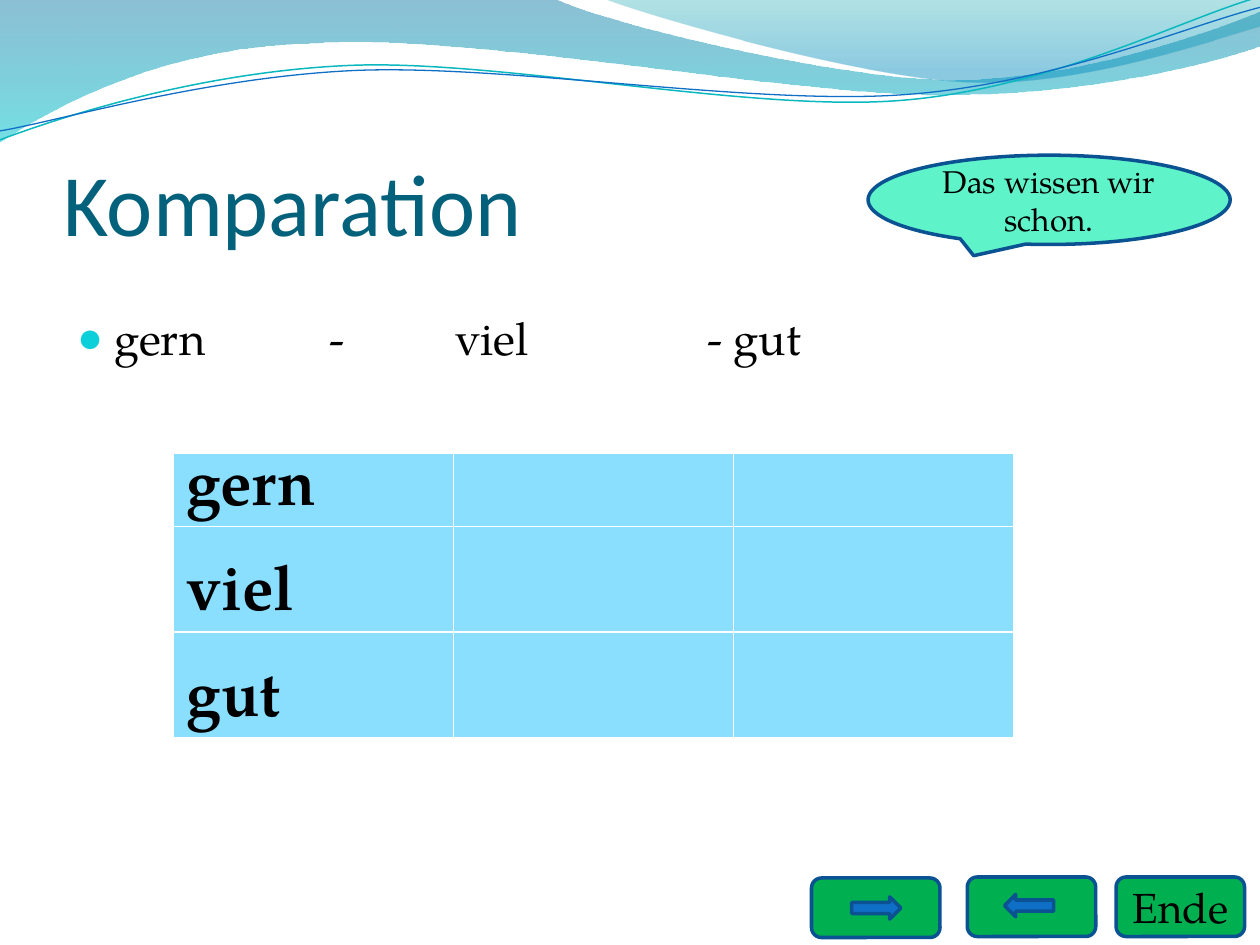
"""Build a German grammar slide on comparison with a table and navigation buttons."""
from dataclasses import dataclass

from lxml import etree
from pptx import Presentation
from pptx.dml.color import RGBColor
from pptx.enum.shapes import MSO_SHAPE
from pptx.enum.text import MSO_ANCHOR, PP_ALIGN
from pptx.oxml.ns import qn
from pptx.util import Cm, Pt

ROUND_RECT = MSO_SHAPE.ROUNDED_RECTANGLE
ARROW = MSO_SHAPE.RIGHT_ARROW
CALLOUT = MSO_SHAPE.OVAL_CALLOUT
MIDDLE, BOTTOM = MSO_ANCHOR.MIDDLE, MSO_ANCHOR.BOTTOM
LEFT, CENTER = PP_ALIGN.LEFT, PP_ALIGN.CENTER
SERIF, SANS = "TeX Gyre Pagella", "Calibri"
COLORS = {
    "text": "000000", "title": "04617B", "bullet": "0BD0D9", "cell": "8ADFFF",
    "button": "00B050", "outline": "0B5292", "arrow": "0F6FC6",
    "callout": "5FF3CA", "teal_line": "0AB8BF", "blue_line": "0F6FC6",
    "deep": "0074A1", "aqua": "00C6CF", "sea": "00A1A9", "sky": "008BBF",
}


@dataclass
class Stop:
    """Gradient stop with position and opacity from 0 to 1."""
    position: float
    color: str
    opacity: float


@dataclass
class Wave:
    """Path in cm: one point per line segment, three per Bézier segment."""
    start: tuple
    segments: list
    stops: tuple = ()
    line: str = ""
    width: float = 0


@dataclass
class Box:
    """Outlined preset shape, measured in cm."""
    kind: int
    left: float
    top: float
    width: float
    height: float
    fill: str
    text: str = ""
    size: int = 18
    rotation: int = 0


WAVES = [
    Wave((0, 0), [
        [(11.18, -0.03)],
        [(12.09, 0.43), (16.87, 1.6), (19.25, 1.6)],
        [(21.67, 1.6), (24.33, 0.66), (25.4, 0.23)],
        [(25.43, 0.91)],
        [(24.97, 1.12), (22.1, 1.93), (18.95, 1.91)],
        [(15.8, 1.91), (9.7, 0.71), (6.53, 0.86)],
        [(3.28, 0.91), (1.17, 2.11), (-0.03, 2.87)],
        [(0, 0)],
    ], stops=(Stop(0, "deep", 0.45), Stop(1, "aqua", 0.55))),
    Wave((12.17, -0.03), [
        [(12.93, 0.28), (17.32, 1.57), (19.53, 1.65)],
        [(21.74, 1.75), (24.41, 0.81), (25.4, 0.53)],
        [(25.4, 0)],
        [(12.17, -0.03)],
    ], stops=(Stop(0, "sea", 0.3), Stop(0.8, "sky", 0.45))),
    Wave((0, 2.82), [
        [(1.22, 2.36), (4.01, 1.45), (7.04, 1.32)],
        [(10.03, 1.19), (15.06, 2.26), (18.11, 2.03)],
        [(21.16, 1.8), (23.83, 0.38), (25.35, -0.05)],
    ], line="teal_line", width=0.85),
    Wave((0, 2.64), [
        [(1.19, 2.44), (4.17, 1.55), (7.19, 1.42)],
        [(10.24, 1.3), (15.16, 2.13), (18.21, 1.91)],
        [(21.23, 1.7), (23.9, 0.53), (25.4, 0.15)],
    ], line="blue_line", width=0.75),
]
NAVIGATION = [
    Box(ROUND_RECT, 16.36, 17.7, 2.59, 1.2, "button"),
    Box(ROUND_RECT, 19.5, 17.68, 2.59, 1.2, "button"),
    Box(ROUND_RECT, 22.5, 17.68, 2.59, 1.2, "button", "Ende", 24),
    Box(ARROW, 17.17, 18.08, 0.99, 0.45, "arrow"),
    Box(ARROW, 20.25, 18.03, 0.99, 0.45, "arrow", rotation=180),
]
SPEECH = Box(CALLOUT, 17.5, 3.13, 7.3, 1.8, "callout", "Das wissen wir schon.")
WORDS = ["gern", "viel", "gut"]
ROW_HEIGHTS = [1.48, 2.13, 2.13]
TAB_STOPS = [5.08, 7.62, 10.16, 12.7]


def rgb(name: str) -> RGBColor:
    return RGBColor.from_string(COLORS[name])


def add_run(p, text: str, size: float, font: str = SERIF, color: str = "text",
            bold: bool = False) -> None:
    r = p.add_run()
    r.text = text
    r.font.size, r.font.name, r.font.bold = Pt(size), font, bold
    r.font.color.rgb = rgb(color)


def bend(sp, segments: list) -> None:
    """Merge each three line points of a Bézier segment into one curve."""
    lines = iter(list(sp._element.iter(qn("a:lnTo"))))
    for segment in segments:
        steps = [next(lines) for _ in segment]
        if len(steps) == 3:
            curve = etree.Element(qn("a:cubicBezTo"))
            steps[0].addprevious(curve)
            for step in steps:
                curve.append(step[0])
                step.getparent().remove(step)


def draw_wave(s, wave: Wave) -> None:
    points = [wave.start] + [pt for segment in wave.segments for pt in segment]
    vertices = [(Cm(x), Cm(y)) for x, y in points]
    builder = s.shapes.build_freeform(*vertices[0])
    builder.add_line_segments(vertices[1:], close=bool(wave.stops))
    sp = builder.convert_to_shape()
    bend(sp, wave.segments)
    sp.shadow.inherit = False
    if not wave.stops:
        sp.fill.background()
        sp.line.color.rgb, sp.line.width = rgb(wave.line), Pt(wave.width)
        return
    sp.line.fill.background()
    sp.fill.gradient()
    sp.fill.gradient_angle = 270
    for target, stop in zip(sp.fill.gradient_stops, wave.stops):
        target.position, target.color.rgb = stop.position, rgb(stop.color)
    for clr, stop in zip(sp._element.spPr.iter(qn("a:srgbClr")), wave.stops):
        etree.SubElement(clr, qn("a:alpha"), val=str(round(stop.opacity * 100000)))


def draw_box(s, box: Box) -> None:
    sp = s.shapes.add_shape(box.kind, Cm(box.left), Cm(box.top),
                            Cm(box.width), Cm(box.height))
    sp.shadow.inherit = False
    sp.rotation = box.rotation
    sp.fill.solid()
    sp.fill.fore_color.rgb = rgb(box.fill)
    sp.line.color.rgb, sp.line.width = rgb("outline"), Pt(2)
    if box.text:
        tf = sp.text_frame
        tf.word_wrap, tf.vertical_anchor = True, MIDDLE
        p = tf.paragraphs[0]
        p.alignment = CENTER
        add_run(p, box.text, box.size)


def place(s, sp, left: float, top: float, width: float, height: float) -> None:
    """Position a placeholder in cm and bring it to the front."""
    sp.left, sp.top, sp.width, sp.height = Cm(left), Cm(top), Cm(width), Cm(height)
    s.shapes._spTree.append(sp._element)


def fill_title(s) -> None:
    sp = s.shapes.title
    place(s, sp, 1.27, 1.95, 22.86, 3.18)
    tf = sp.text_frame
    tf.vertical_anchor = BOTTOM
    tf.margin_left = tf.margin_right = tf.margin_bottom = 0
    p = tf.paragraphs[0]
    p.alignment = LEFT
    add_run(p, "Komparation", 50, SANS, "title")


def fill_body(s) -> None:
    sp = s.placeholders[1]
    place(s, sp, 1.3, 6.12, 22.86, 12.19)
    p = sp.text_frame.paragraphs[0]
    p.space_before = Pt(5)
    pPr = p._p.get_or_add_pPr()
    pPr.set("marL", str(Cm(0.76)))
    pPr.set("indent", str(Cm(-0.76)))
    clr = etree.SubElement(pPr, qn("a:buClr"))
    etree.SubElement(clr, qn("a:srgbClr"), val=COLORS["bullet"])
    etree.SubElement(pPr, qn("a:buSzPct"), val="95000")
    etree.SubElement(pPr, qn("a:buChar"), char="●")
    tabs = etree.SubElement(pPr, qn("a:tabLst"))
    for stop in TAB_STOPS:
        etree.SubElement(tabs, qn("a:tab"), pos=str(Cm(stop)), algn="l")
    add_run(p, "gern \t-\tviel \t\t- gut", 26)


def draw_table(s) -> None:
    table = s.shapes.add_table(len(WORDS), 3, Cm(3.5), Cm(9.13), Cm(16.93),
                               Cm(sum(ROW_HEIGHTS))).table
    for row, word, height in zip(table.rows, WORDS, ROW_HEIGHTS):
        row.height = Cm(height)
        for cell in row.cells:
            cell.fill.solid()
            cell.fill.fore_color.rgb = rgb("cell")
            cell.vertical_anchor = BOTTOM
            cell.margin_top, cell.margin_bottom = 0, Cm(0.1)
        p = row.cells[0].text_frame.paragraphs[0]
        p.line_spacing = Pt(38)
        add_run(p, word, 36, bold=True)


def main() -> None:
    prs = Presentation()
    prs.slide_width, prs.slide_height = Cm(25.4), Cm(19.05)
    s = prs.slides.add_slide(prs.slide_layouts[1])
    for wave in WAVES:
        draw_wave(s, wave)
    for box in NAVIGATION:
        draw_box(s, box)
    fill_title(s)
    fill_body(s)
    draw_table(s)
    draw_box(s, SPEECH)
    prs.save("out.pptx")


if __name__ == "__main__":
    main()
